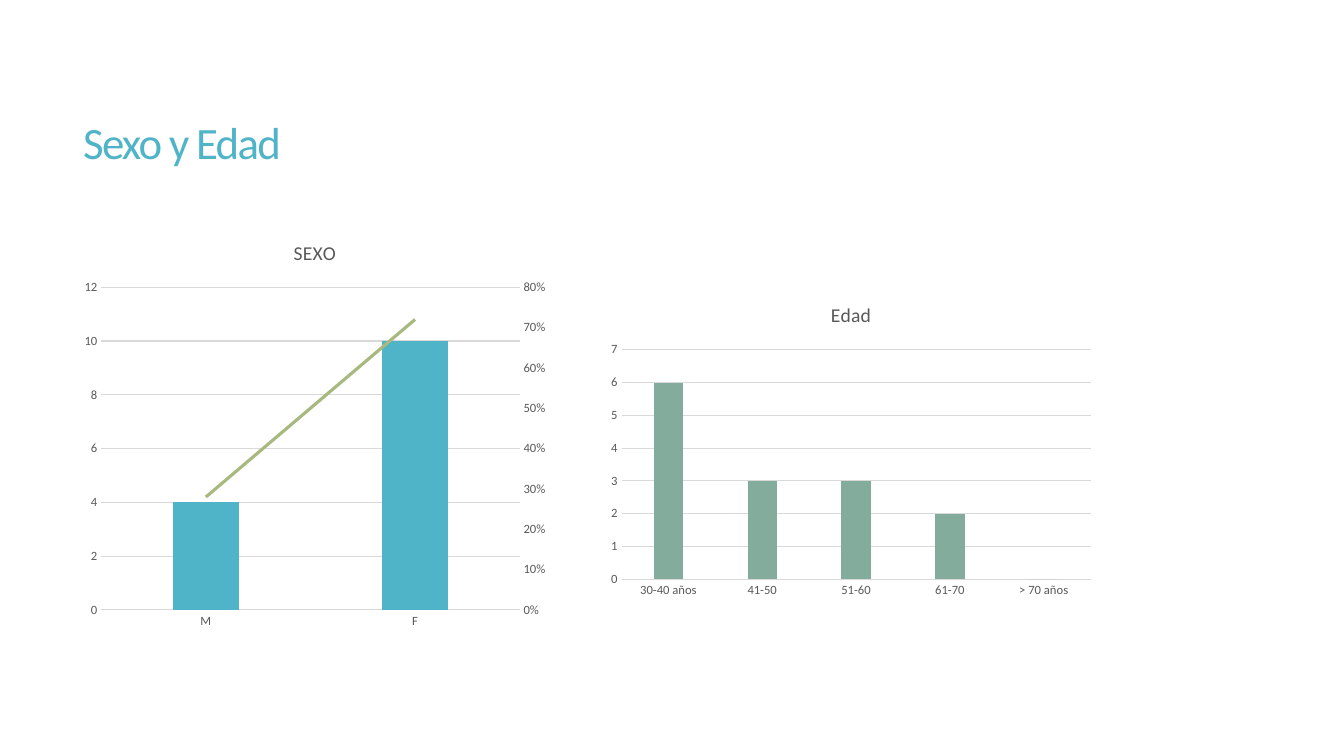
import copy

import pptx
import pptx.chart.data
import pptx.dml.color
import pptx.enum.chart
import pptx.enum.text
import pptx.oxml
import pptx.oxml.ns
import pptx.util

EMU_PER_PX = 914400 / 100.8
FONT = "Calibri"
TEAL = pptx.dml.color.RGBColor(0x50, 0xB4, 0xC8)
SAGE = pptx.dml.color.RGBColor(0x84, 0xAC, 0x9D)
OLIVE = pptx.dml.color.RGBColor(0xA8, 0xB9, 0x7F)
GRAY = pptx.dml.color.RGBColor(0x59, 0x59, 0x59)
GRID = pptx.dml.color.RGBColor(0xD9, 0xD9, 0xD9)
qn = pptx.oxml.ns.qn


def px(length):
    return pptx.util.Emu(round(length * EMU_PER_PX))


def set_values(target, values):
    for name, value in values.items():
        setattr(target, name, value)


def set_font(font, size, color):
    set_values(font, {"name": FONT, "size": pptx.util.Pt(size), "bold": False})
    font.color.rgb = color


def set_line(line, color, width):
    line.color.rgb = color
    line.width = pptx.util.Pt(width)


def add_title(slide, box, text):
    title = slide.shapes.title
    set_values(title, dict(zip(("left", "top", "width", "height"), map(px, box))))
    frame = title.text_frame
    set_values(frame, {"text": text, "word_wrap": True,
                       "vertical_anchor": pptx.enum.text.MSO_ANCHOR.MIDDLE})
    paragraph = frame.paragraphs[0]
    set_values(paragraph, {"alignment": pptx.enum.text.PP_ALIGN.LEFT,
                           "line_spacing": 0.85})
    run = paragraph.runs[0]
    set_font(run.font, 32, TEAL)
    run.font._element.set("spc", "-120")


def add_column_chart(slide, box, title, categories, series_values, color, top_value, step):
    data = pptx.chart.data.CategoryChartData()
    data.categories = categories
    for number, values in enumerate(series_values, 1):
        data.add_series(f"Series {number}", values)
    chart = slide.shapes.add_chart(
        pptx.enum.chart.XL_CHART_TYPE.COLUMN_CLUSTERED, *map(px, box), data).chart
    set_font(chart.font, 10, GRAY)
    set_values(chart, {"has_legend": False, "has_title": True})

    # Heading
    chart.chart_title.include_in_layout = False
    heading = chart.chart_title.text_frame
    heading.text = title
    set_font(heading.paragraphs[0].runs[0].font, 14, GRAY)

    # Columns
    plot = chart.plots[0]
    set_values(plot, {"gap_width": 219, "overlap": -27, "vary_by_categories": False})
    fill = plot.series[0].format.fill
    fill.solid()
    fill.fore_color.rgb = color

    # Axes
    for axis in (chart.category_axis, chart.value_axis):
        set_values(axis, {"major_tick_mark": pptx.enum.chart.XL_TICK_MARK.NONE,
                          "minor_tick_mark": pptx.enum.chart.XL_TICK_MARK.NONE})
        set_font(axis.tick_labels.font, 9, GRAY)
    set_line(chart.category_axis.format.line, GRID, 0.75)
    value_axis = chart.value_axis
    set_values(value_axis, {"minimum_scale": 0, "maximum_scale": top_value,
                            "major_unit": step, "has_major_gridlines": True})
    set_values(value_axis.tick_labels, {"number_format": "General",
                                        "number_format_is_linked": False})
    value_axis.format.line.fill.background()
    set_line(value_axis.major_gridlines.format.line, GRID, 0.75)
    return chart


def move_to_right_axis(chart, color, top_value, step):
    """Turn the second series into a line on a percentage axis at the right."""
    line_series = chart.plots[0].series[1]
    set_line(line_series.format.line, color, 2.25)
    series = line_series._element
    bar_chart = series.getparent()
    line_chart = pptx.oxml.parse_xml(
        f'<c:lineChart {pptx.oxml.ns.nsdecls("c")}><c:grouping val="standard"/>'
        '<c:varyColors val="0"/><c:marker val="1"/>'
        '<c:axId val="5001"/><c:axId val="5002"/></c:lineChart>')
    bar_chart.addnext(line_chart)
    line_chart.insert(2, series)
    for inverted in series.findall(qn("c:invertIfNegative")):
        series.remove(inverted)
    marker = pptx.oxml.parse_xml(
        f'<c:marker {pptx.oxml.ns.nsdecls("c")}><c:symbol val="none"/></c:marker>')
    series.find(qn("c:spPr")).addnext(marker)
    chart.plots[1].series[0].smooth = False

    # Second pair of axes: hidden categories, percentages at the right
    category_axis = copy.deepcopy(chart.category_axis._element)
    value_axis = copy.deepcopy(chart.value_axis._element)
    value_axis.remove(value_axis.find(qn("c:majorGridlines")))
    value_axis.find(qn("c:numFmt")).set("formatCode", "0%")
    settings = (
        (category_axis, {"axId": 5001, "crossAx": 5002, "delete": 1}),
        (value_axis, {"axId": 5002, "crossAx": 5001, "axPos": "r", "crosses": "max",
                      "scaling/c:max": top_value, "majorUnit": step}),
    )
    for axis, values in settings:
        for name, value in values.items():
            axis.xpath(f"c:{name}")[0].set("val", str(value))
    chart.value_axis._element.addnext(value_axis)
    value_axis.addnext(category_axis)


def set_plot_area(chart, left, top, width, height):
    layout = pptx.oxml.parse_xml(
        f'<c:layout {pptx.oxml.ns.nsdecls("c")}><c:manualLayout>'
        '<c:layoutTarget val="inner"/><c:xMode val="edge"/><c:yMode val="edge"/>'
        f'<c:x val="{left}"/><c:y val="{top}"/><c:w val="{width}"/><c:h val="{height}"/>'
        '</c:manualLayout></c:layout>')
    plot_area = chart.plots[0]._element.getparent()
    for old_layout in plot_area.findall(qn("c:layout")):
        plot_area.remove(old_layout)
    plot_area.insert(0, layout)


def main():
    presentation = pptx.Presentation()
    set_values(presentation, {"slide_width": px(1344), "slide_height": px(756)})
    slide = presentation.slides.add_slide(presentation.slide_layouts[5])
    add_title(slide, (73, 55, 1187, 182), "Sexo y Edad")

    # Sex: count as columns, share as a line
    sex_chart = add_column_chart(slide, (75, 222, 480, 415), "SEXO", ("M", "F"),
                                 ((4, 10), (0.28, 0.72)), TEAL, 12, 2)
    move_to_right_axis(sex_chart, OLIVE, 0.8, 0.1)

    # Age groups
    age_chart = add_column_chart(slide, (596, 286, 510, 319), "Edad",
                                 ("30-40 años", "41-50", "51-60", "61-70", "> 70 años"),
                                 ((6, 3, 3, 2, 0),), SAGE, 7, 1)
    set_plot_area(age_chart, 0.05, 0.2, 0.92, 0.72)
    presentation.save("out.pptx")


if __name__ == "__main__":
    main()
